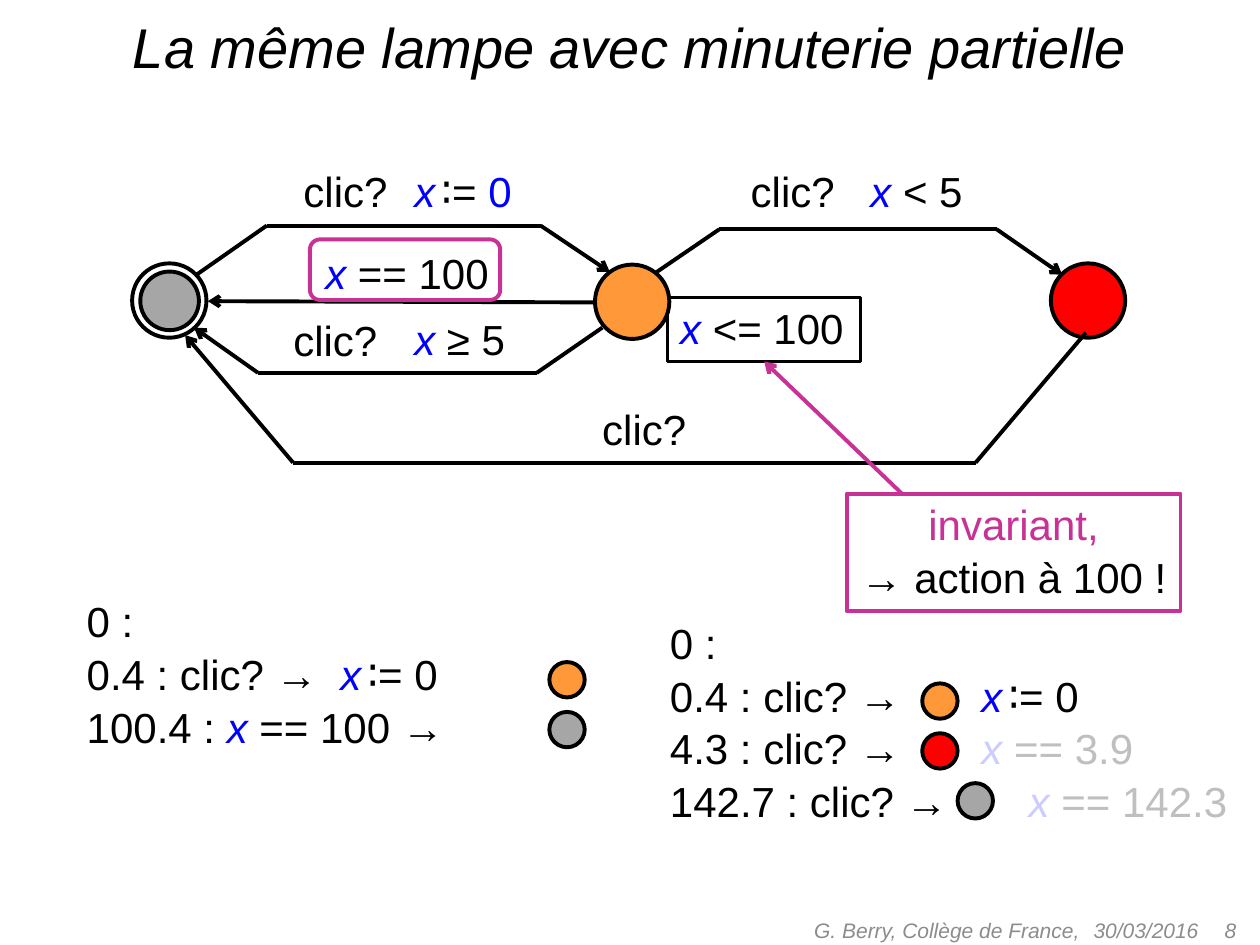
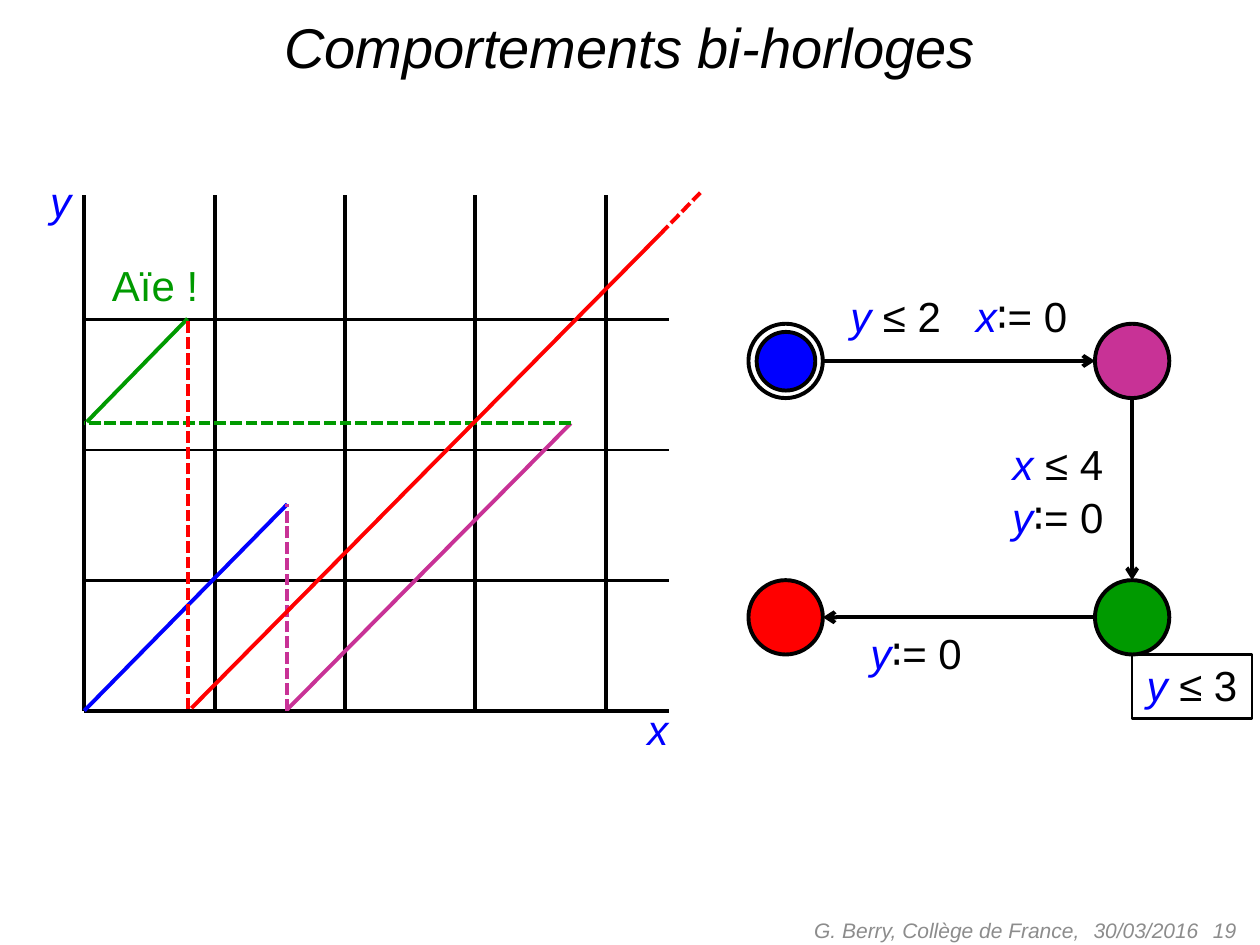
from pptx import Presentation
from pptx.dml.color import RGBColor
from pptx.enum.dml import MSO_LINE as Dash
from pptx.enum.shapes import MSO_CONNECTOR as Link, MSO_SHAPE as Form
from pptx.enum.text import MSO_ANCHOR as Anchor, PP_ALIGN as Align
from pptx.oxml.ns import qn
from pptx.util import Pt
from lxml.etree import SubElement as Sub

BLACK, GREY, RED, ORANGE = "000000", "A6A6A6", "FF0000", "FF9839"
BLUE, PINK, GREEN = "0000FF", "C83296", "009A00"
DIM, FADED, PALE = "8C8C8C", "BFBFBF", "CCCCFF"
BALL, DOT, ROW = 42.5, 20.2, 36.7
X = ("x", {"color": BLUE, "italic": True})
Y = ("y", {"color": BLUE, "italic": True})
PALE_X = ("x ", {"color": PALE, "italic": True})
THIN = (" ", {"size": 12})
RESET = "∶= 0"


def tint(code):
    """Turn a hex string into a colour."""
    return RGBColor.from_string(code)


def write(shape, paras, size=24, color=BLACK, italic=False, align=Align.LEFT,
          anchor=Anchor.TOP, pad=(7.2, 1.4, 0, 0), space=1.05, stops=()):
    """Fill a shape with paragraphs made of plain or formatted runs."""
    frame = shape.text_frame
    frame.word_wrap = True
    frame.vertical_anchor = anchor
    frame.margin_left, frame.margin_top, frame.margin_right, frame.margin_bottom = map(Pt, pad)
    for i, runs in enumerate(paras):
        para = frame.add_paragraph() if i else frame.paragraphs[0]
        para.alignment, para.line_spacing = align, space
        if i < len(stops) and stops[i]:
            tabs = Sub(para._p.get_or_add_pPr(), qn("a:tabLst"))
            Sub(tabs, qn("a:tab"), pos=str(int(Pt(stops[i]))), algn="l")
        for item in runs:
            words, own = (item, {}) if isinstance(item, str) else item
            run = para.add_run()
            run.text = words
            font = run.font
            font.name = "Arial"
            font.size = Pt(own.get("size", size))
            font.italic = own.get("italic", italic)
            font.color.rgb = tint(own.get("color", color))


def label(slide, box, *paras, **style):
    """Place a text box."""
    write(slide.shapes.add_textbox(*map(Pt, box)), paras, **style)


def draw(slide, form, box, fill=None, line=BLACK, width=2.25):
    """Place an outlined shape."""
    shape = slide.shapes.add_shape(form, *map(Pt, box))
    shape.shadow.inherit = False
    if fill:
        shape.fill.solid()
        shape.fill.fore_color.rgb = tint(fill)
    else:
        shape.fill.background()
    shape.line.color.rgb = tint(line)
    shape.line.width = Pt(width)
    return shape


def ball(slide, x, y, fill, first=False, size=BALL):
    """Place a state disc, with a double ring for the first state."""
    draw(slide, Form.OVAL, (x, y, size, size), None if first else fill)
    if first:
        draw(slide, Form.OVAL, (x + 4.7, y + 4.7, 33.5, 33.5), fill)


def link(slide, start, end, color=BLACK, width=2.25, dash=False, arrow=False):
    """Draw a straight line, dashed or with an arrowhead on demand."""
    line = slide.shapes.add_connector(Link.STRAIGHT, *map(Pt, (*start, *end)))
    line.line.color.rgb = tint(color)
    line.line.width = Pt(width)
    if dash:
        line.line.dash_style = Dash.SQUARE_DOT
    if arrow:
        Sub(line.line._get_or_add_ln(), qn("a:tailEnd"), type="arrow")
    Sub(line._element.spPr, qn("a:effectLst"))
    return line


def route(slide, x, y, *spots):
    """Draw a bent path that ends with an arrowhead."""
    spots = [(x + dx, y + dy) for dx, dy in spots]
    for i, (start, end) in enumerate(zip(spots, spots[1:]), 2):
        link(slide, start, end, arrow=i == len(spots))


def page(deck, title, number):
    """Add a slide with its title and footer."""
    slide = deck.slides.add_slide(deck.slide_layouts[6])
    label(slide, (18, 3.6, 684, 46), [title], size=32, italic=True,
          align=Align.CENTER, pad=(7.2, 3.6, 7.2, 3.6), space=1)
    foot = (
        ((396, 522.8, 228.2, 17.2), "G. Berry, Collège de France,", Align.RIGHT),
        ((617.8, 522.8, 80, 17.2), "30/03/2016", Align.LEFT),
        ((663.5, 522.8, 50, 17.2), number, Align.RIGHT),
    )
    for box, words, align in foot:
        label(slide, box, [words], size=12, color=DIM, italic=True, align=align,
              anchor=Anchor.MIDDLE, pad=(7.2, 0, 7.2, 0), space=1)
    return slide


def lamp(slide, box):
    """Draw the timed lamp automaton and return its invariant box."""
    x, y, w, h = box
    ball(slide, x + w - BALL, y + 59, RED)
    ball(slide, x, y + 59, GREY, first=True)
    route(slide, x, y, (36.8, 65.5), (77, 37.4), (233.4, 37.4), (273, 64))
    route(slide, x, y, (268.7, 95.7), (231.2, 121.6), (72, 121.6), (35.4, 95.7))
    route(slide, x, y, (297.5, 65.5), (335.6, 39.5), (494, 39.5), (531.5, 65.5))
    route(slide, x, y, (545, 98.6), (482, h), (92, h), (30.3, 100))
    route(slide, x, y, (264.3, 81.3), (43.3, 80.6))
    for dx, dy in ((90.8, 0), (346.4, 0), (85, 85.6), (261.5, 136)):
        label(slide, (x + dx, y + dy, 63.4, ROW), ["clic?"])
    tests = (
        (154.2, 0, [X, THIN, "∶= ", ("0", {"color": BLUE})]),
        (414.8, 0, [X, " < 5"]),
        (154.2, 85, [X, " ≥ 5"]),
    )
    for dx, dy, runs in tests:
        label(slide, (x + dx, y + dy, 78, ROW), runs)
    limit = draw(slide, Form.ROUNDED_RECTANGLE, (x + 101.6, y + 45.3, 108.7, 34.6), line=PINK)
    write(limit, [[X, " == 100"]])
    bound = draw(slide, Form.RECTANGLE, (x + 306.1, y + 78.4, 110.2, ROW), width=1.5)
    write(bound, [[X, " <= 100"]])
    ball(slide, x + 264.5, y + 59.7, ORANGE)
    return bound


def remark(slide, box, bound):
    """Explain the invariant and point at its box."""
    x, y, w, h = box
    note = draw(slide, Form.RECTANGLE, box, line=PINK)
    write(note, [[("invariant,", {"color": PINK})], ["→ action à 100 !"]],
          align=Align.CENTER, pad=(2, 1.4, 2, 0))
    arrow = link(slide, (x + 31.7, y), (x, y), PINK, arrow=True)
    arrow.end_connect(bound, 2)


def trace(slide, box, paras, stops, dots):
    """List a run of the lamp, with a disc for each state reached."""
    x, y, w, h = box
    label(slide, box, *paras, stops=stops)
    for i, (dx, fill) in enumerate(dots):
        ball(slide, x + dx, y + 40.6 + 28.5 * i, fill, size=DOT)


def graph(slide, box):
    """Plot the two clocks on a grid."""
    x, y, w, h = box
    base, step = y + h, 74.5
    for i in range(5):
        link(slide, (x + i * step, y), (x + i * step, base))
    for i in range(4):
        level = base - i * step
        link(slide, (x + w, level), (x, level), width=1.5 if i else 2.25)
    moves = (
        (0, 0, 116, 118, BLUE, False),
        (116, 0, 116, 118, PINK, True),
        (116, 0.7, 278, 164.2, PINK, False),
        (278, 164.2, 0, 164.2, GREEN, True),
        (1.4, 165, 59, 224, GREEN, False),
        (59, 0.7, 59, 224, RED, True),
        (61.2, 1.4, 329, 272.2, RED, False),
        (329, 272.2, 352, 296, RED, True),
    )
    for x1, y1, x2, y2, color, dash in moves:
        link(slide, (x + x1, base - y1), (x + x2, base - y2), color, dash=dash)
    label(slide, (x + 8.7, y + 33.8, 65.5, ROW), ["Aïe !"], color=GREEN)
    for dx, dy, name in ((w - 19.4, h - 7.9, X), (-26.6, -15.1, Y)):
        label(slide, (x + dx, y + dy, 29, 36), [name], pad=(7.2, 3.6, 0, 0), space=1)


def clocks(slide, box):
    """Draw the automaton with two clocks."""
    x, y, w, h = box
    right, low, half = w - BALL, h - BALL, BALL / 2
    ball(slide, x, y, BLUE, first=True)
    ball(slide, x + right, y, PINK)
    ball(slide, x + right, y + low, GREEN)
    ball(slide, x, y + low, RED)
    route(slide, x, y, (BALL, half), (right, half))
    route(slide, x, y, (w - half, BALL), (w - half, low))
    route(slide, x, y, (right, h - half), (BALL, h - half))
    label(slide, (x + 51.1, y - 21.6, 145.4, ROW), [Y, " ≤ 2\t", X, RESET], stops=[71.7])
    label(slide, (x + 139.7, y + 62.6, 74.2, 67), [X, " ≤ 4"], [Y, RESET],
          align=Align.CENTER, pad=(2, 1.4, 2, 0))
    label(slide, (x + 62.6, y + 170.6, 74.2, ROW), [Y, RESET])
    bound = draw(slide, Form.RECTANGLE, (x + w - half, y + h, 68.4, ROW), width=1.5)
    write(bound, [[Y, " ≤ 3"]], align=Align.CENTER, pad=(2, 1.4, 2, 0))


def main():
    """Build both slides and save them."""
    deck = Presentation()
    deck.slide_width, deck.slide_height = Pt(720), Pt(540)

    slide = page(deck, "La même lampe avec minuterie partielle", "8")
    bound = lamp(slide, (75.5, 91.5, 567.5, 172.9))
    trace(slide, (42.5, 337.7, 227.5, 98),
          [["0 :"], ["0.4 : clic? →\t", X, THIN, RESET], ["100.4 : ", X, " == 100 →"]],
          (0, 145, 0), ((271.4, ORANGE), (271.4, GREY)))
    trace(slide, (375.8, 349.9, 336.2, 130),
          [["0 :"], ["0.4 : clic? →\t", X, THIN, RESET],
           ["4.3 : clic? →\t", PALE_X, ("== 3.9", {"color": FADED})],
           ["142.7 : clic? →\t", PALE_X, ("== 142.3", {"color": FADED})]],
          (0, 178, 178, 205), ((151.2, ORANGE), (151.2, RED), (171.4, GREY)))
    remark(slide, (483.8, 282.2, 190.8, 67), bound)

    slide = page(deck, "Comportements bi-horloges", "19")
    graph(slide, (48.2, 111.6, 334.1, 294.5))
    clocks(slide, (427.7, 185, 240.5, 189))
    deck.save("out.pptx")


if __name__ == "__main__":
    main()
